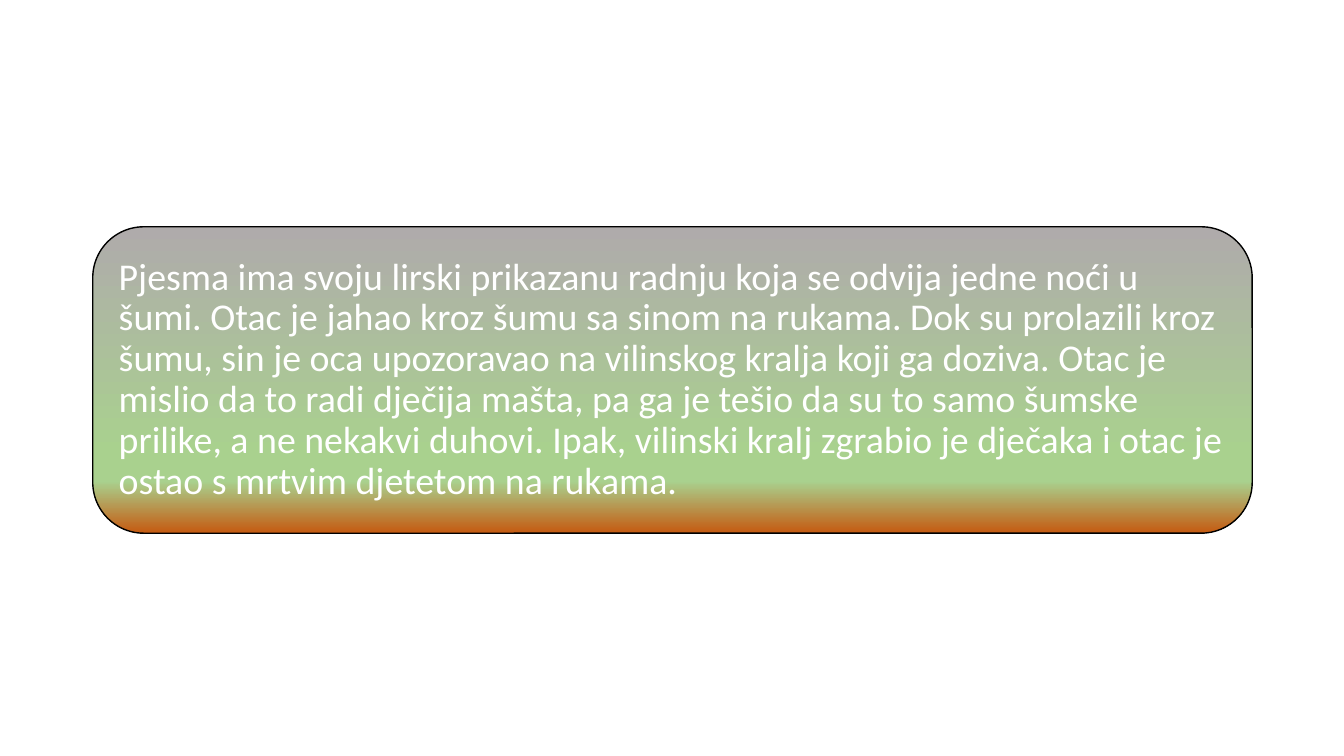
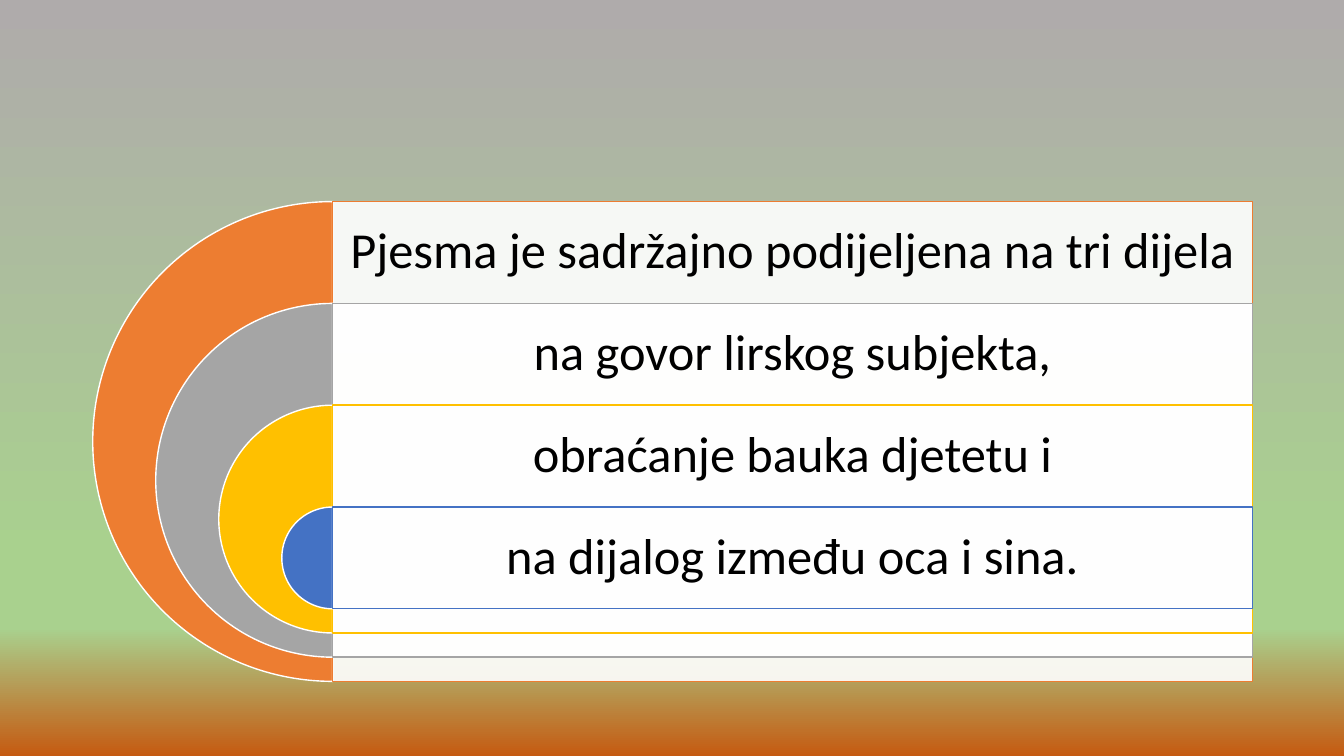
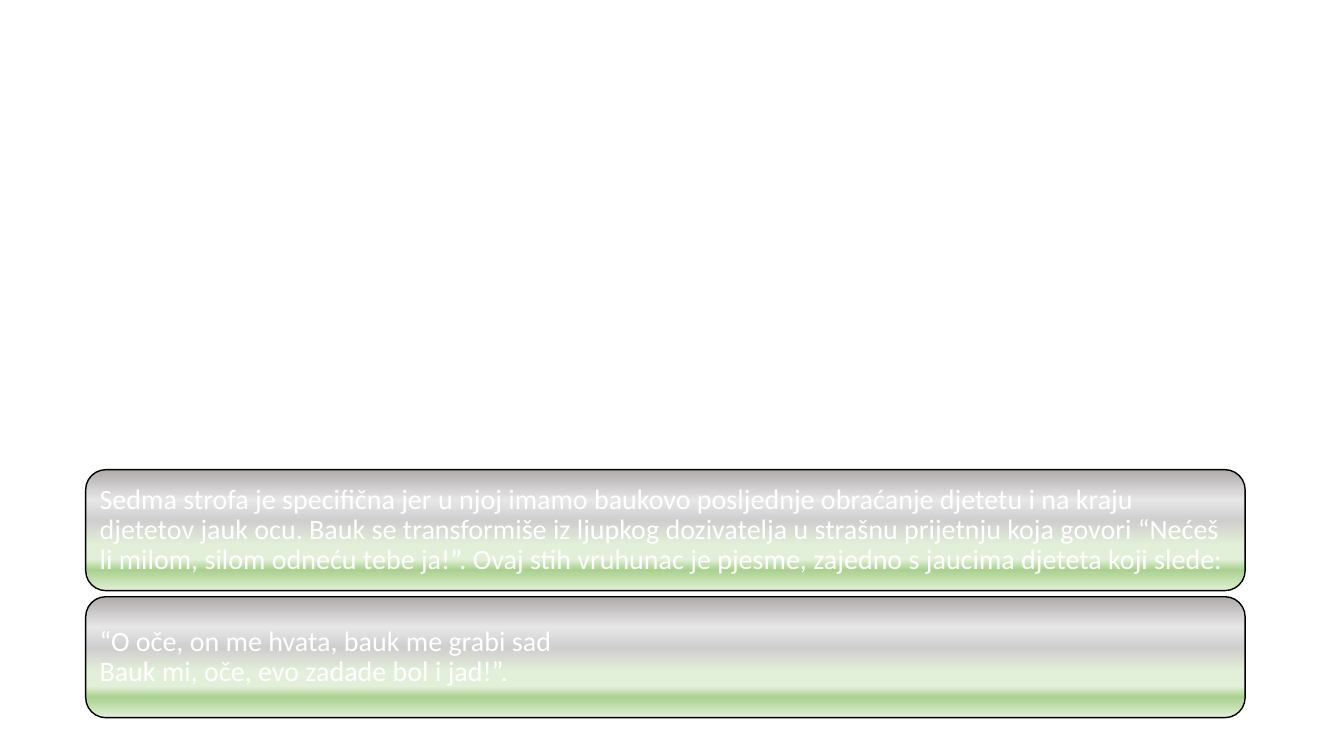
from dataclasses import dataclass

from lxml import etree
from pptx import Presentation
from pptx.dml.color import RGBColor
from pptx.enum.shapes import MSO_SHAPE
from pptx.enum.text import MSO_ANCHOR, PP_ALIGN
from pptx.oxml.ns import qn
from pptx.util import Inches, Pt

ROUNDED = MSO_SHAPE.ROUNDED_RECTANGLE
RECTANGLE = MSO_SHAPE.RECTANGLE
PIE = MSO_SHAPE.PIE
MIDDLE = MSO_ANCHOR.MIDDLE
LEFT, CENTER = PP_ALIGN.LEFT, PP_ALIGN.CENTER


@dataclass(frozen=True)
class Theme:
    font: str = "Calibri"
    white: str = "FFFFFF"
    black: str = "000000"
    ring_colors: tuple = ("ED7D31", "A5A5A5", "FFC000", "4472C4")
    meadow: tuple = ((0, "AFABAB"), (74, "A9D18E"), (83, "A9D18E"), (100, "C55A11"))
    mist: tuple = ((0, "AFABAB"), (25, "E7E6E6"), (42, "D0CECE"), (63, "E2F0D9"),
                   (74, "E2F0D9"), (83, "A9D18E"), (100, "E2F0D9"))
    summary_size: int = 27
    ring_size: int = 36
    stanza_size: int = 20
    line_width: int = 1
    line_spacing: float = 0.9
    panel_alpha: int = 90


theme = Theme()


def set_gradient(fill, owner, stops):
    """Fill from top to bottom with (percent, colour) stops."""
    fill.gradient()
    fill.gradient_angle = 270
    stop_list = owner.find(".//" + qn("a:gsLst"))
    for old_stop in list(stop_list):
        stop_list.remove(old_stop)
    for percent, color in stops:
        stop = etree.SubElement(stop_list, qn("a:gs"), pos=str(percent * 1000))
        etree.SubElement(stop, qn("a:srgbClr"), val=color)


def add_block(slide, kind, box, fill, line, text="", size=0, color="", align=LEFT, inset=0.0):
    """Add an outlined shape, with a plain or gradient fill and optional text."""
    shape = slide.shapes.add_shape(kind, *(Inches(length) for length in box))
    shape.shadow.inherit = False
    if isinstance(fill, str):
        shape.fill.solid()
        shape.fill.fore_color.rgb = RGBColor.from_string(fill)
    else:
        set_gradient(shape.fill, shape._element, fill)
    shape.line.color.rgb = RGBColor.from_string(line)
    shape.line.width = Pt(theme.line_width)
    if text:
        frame = shape.text_frame
        frame.word_wrap = True
        frame.vertical_anchor = MIDDLE
        frame.margin_left = frame.margin_right = Inches(inset)
        frame.margin_top = frame.margin_bottom = Inches(inset)
        paragraph = frame.paragraphs[0]
        paragraph.text = text
        paragraph.alignment = align
        paragraph.line_spacing = theme.line_spacing
        paragraph.font.name = theme.font
        paragraph.font.size = Pt(size)
        paragraph.font.color.rgb = RGBColor.from_string(color)
    return shape


presentation = Presentation()
presentation.slide_width = Inches(13.33)
presentation.slide_height = Inches(7.5)
blank = presentation.slide_layouts[6]

# Shared content column
column_left, column_width = 0.92, 11.5
column_right = column_left + column_width

# Slide 1: summary of the poem
slide = presentation.slides.add_slide(blank)
summary = (
    "Pjesma ima svoju lirski prikazanu radnju koja se odvija jedne noći u šumi. "
    "Otac je jahao kroz šumu sa sinom na rukama. Dok su prolazili kroz šumu, sin je oca "
    "upozoravao na vilinskog kralja koji ga doziva. Otac je mislio da to radi dječija mašta, "
    "pa ga je tešio da su to samo šumske prilike, a ne nekakvi duhovi. Ipak, vilinski kralj "
    "zgrabio je dječaka i otac je ostao s mrtvim djetetom na rukama."
)
add_block(slide, ROUNDED, (column_left, 2.25, column_width, 3.04), theme.meadow, theme.black,
          summary, theme.summary_size, theme.white, inset=0.11)

# Slide 2: nested half rings, each with a panel to its right
slide = presentation.slides.add_slide(blank)
set_gradient(slide.background.fill, slide._element, theme.meadow)
parts = (
    "Pjesma je sadržajno podijeljena na tri dijela",
    "na govor lirskog subjekta,",
    "obraćanje bauka djetetu i",
    "na dijalog između oca i sina.",
)
rings_top, row_height, panel_inset = 2, 1.01, 0.15
outer_diameter, diameter_step = 4.76, 1.25
center_x = column_left + outer_diameter / 2
for row, (part, color) in enumerate(zip(parts, theme.ring_colors)):
    top = rings_top + row * row_height
    diameter = outer_diameter - row * diameter_step
    ring = add_block(slide, PIE, (center_x - diameter / 2, top, diameter, diameter),
                     color, theme.white)
    ring.adjustments[0], ring.adjustments[1] = 54, 162
    panel = add_block(slide, RECTANGLE, (center_x, top, column_right - center_x, diameter),
                      theme.white, color, part, theme.ring_size, theme.black, CENTER, panel_inset)
    # Keep the text within the first row of the panel
    panel.text_frame.margin_bottom = Inches(diameter - row_height + panel_inset)
    panel_color = panel._element.spPr.find(qn("a:solidFill"))[0]
    etree.SubElement(panel_color, qn("a:alpha"), val=str(theme.panel_alpha * 1000))

# Slide 3: the seventh stanza
slide = presentation.slides.add_slide(blank)
stanza_texts = (
    "Sedma strofa je specifična jer u njoj imamo baukovo posljednje obraćanje djetetu i na "
    "kraju djetetov jauk ocu. Bauk se transformiše iz ljupkog dozivatelja u strašnu prijetnju "
    "koja govori “Nećeš li milom, silom odneću tebe ja!”. Ovaj stih vruhunac je pjesme, "
    "zajedno s jaucima djeteta koji slede:",
    "“O oče, on me hvata, bauk me grabi sad\vBauk mi, oče, evo zadade bol i jad!”.",
)
stanza_left, stanza_top, stanza_height, stanza_gap = 0.85, 4.66, 1.2, 0.06
for row, text in enumerate(stanza_texts):
    top = stanza_top + row * (stanza_height + stanza_gap)
    add_block(slide, ROUNDED, (stanza_left, top, column_width, stanza_height), theme.mist,
              theme.black, text, theme.stanza_size, theme.white, inset=0.08)

presentation.save("out.pptx")
